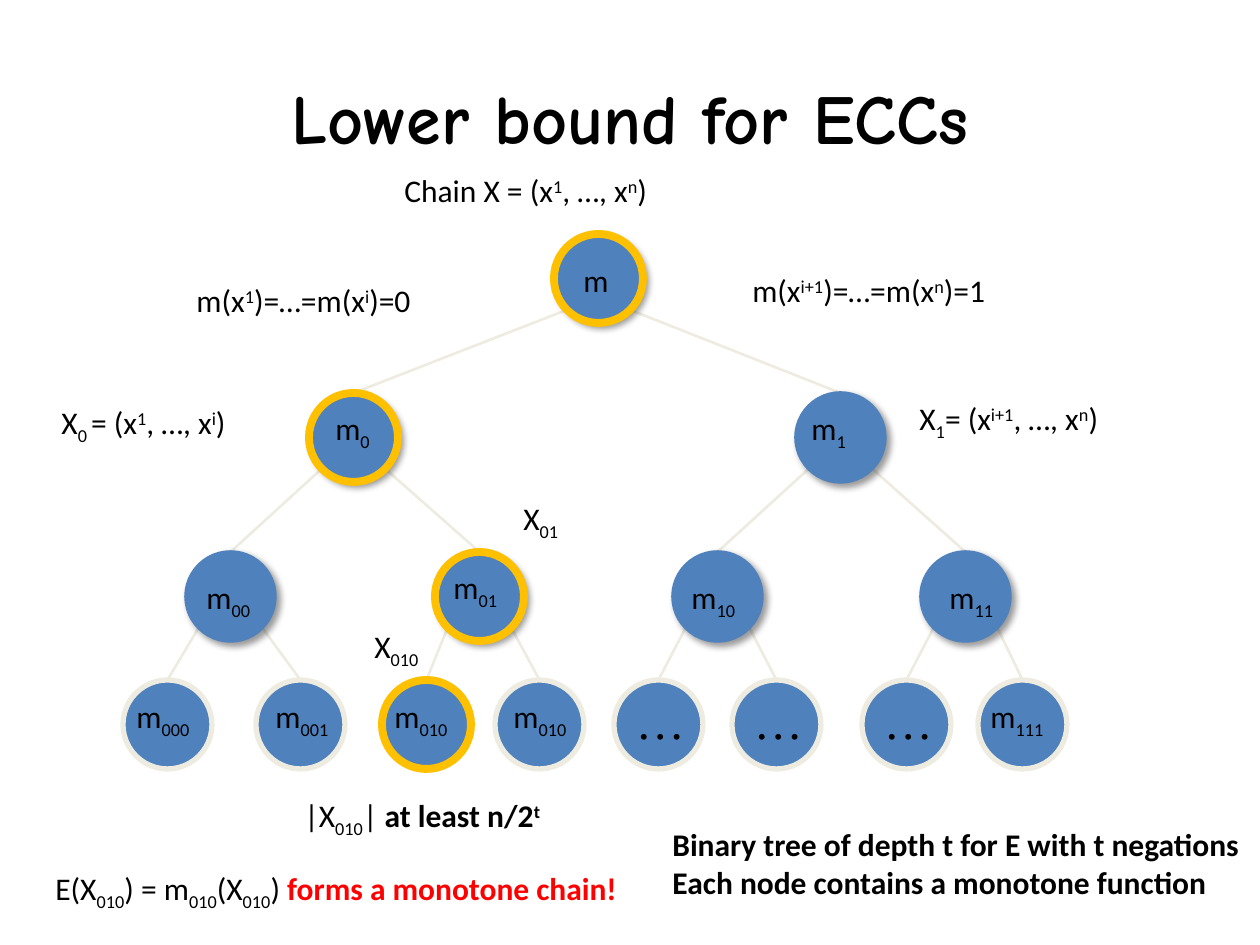
"""Build a slide with a binary tree of monotone functions."""
from lxml.etree import SubElement
from pptx import Presentation
from pptx.dml.color import RGBColor as RGB
from pptx.enum.shapes import MSO_CONNECTOR as CONN, MSO_SHAPE as SHAPE
from pptx.enum.text import MSO_ANCHOR as ANCHOR, MSO_AUTO_SIZE as AUTO, PP_ALIGN as ALIGN
from pptx.oxml.ns import qn
from pptx.util import Emu, Inches, Pt

BLACK, RED = RGB(0, 0, 0), RGB(0xFF, 0, 0)
BLUE, GOLD, CREAM = RGB(0x4F, 0x81, 0xBD), RGB(0xFF, 0xC0, 0), RGB(0xEE, 0xEC, 0xE1)
SCALE = 914400 / 126
SIZE, ARM_X, ARM_Y = 89, 32, 76

TITLE = "Lower bound for ECCs"
LEVELS = [
    (234, [554]),
    (393, [309, 796]),
    (552, [186, 435, 673, 921]),
    (680, [123, 256, 382, 495, 614, 732, 862, 978]),
]
ELLIPSIS_NODES = (11, 12, 13)
CHOSEN_NODES = (0, 1, 4, 9)

# Markup: "~" splits runs; a leading _ is subscript, ^ superscript, * bold, ! bold red.
LABELS = [
    ("m", 571, 255, 52),
    ("m~_0", 323, 403, 62),
    ("m~_1", 799, 403, 72),
    ("m~_00", 194, 572, 72),
    ("m~_01", 441, 562, 72),
    ("m~_10", 679, 572, 72),
    ("m~_11", 937, 572, 72),
    ("m~_000", 124, 691, 83),
    ("m~_001", 263, 691, 83),
    ("m~_010", 382, 691, 83),
    ("m~_010", 501, 691, 83),
    ("m~_111", 978, 691, 83),
    ("Chain X = (x~^1~, …, x~^n~)", 392, 165, 338),
    ("X~_0 ~= (x~^1~, …, x~^i~)", 49, 397, 268),
    ("m(x~^1~)=…=m(x~^i~)=0", 184, 275, 246),
    ("m(x~^i+1~)=…=m(x~^n~)=1", 740, 265, 266),
    ("X~_1~= (x~^i+1~, …, x~^n~)", 907, 393, 229),
    ("X~_01", 511, 493, 63),
    ("X~_010", 362, 621, 74),
    ("*Binary tree of depth t for E with t negations\n*Each node contains a monotone function", 660, 819, 600),
    ("|X~_010~| ~*at least n/2~^*t", 292, 790, 285),
    ("E(X~_010~) = m~_010~(X~_010~) ~!forms a monotone chain!", 43, 863, 616),
]
STYLES = {
    "_": {"base": -25000},
    "^": {"base": 30000},
    "*": {"bold": True},
    "!": {"bold": True, "color": RED},
}


def px(n):
    return Emu(round(n * SCALE))


def write(tf, text, size=18, font="Calibri", color=BLACK, bold=False, italic=False, align=ALIGN.LEFT):
    for i, line in enumerate(text.split("\n")):
        p = tf.add_paragraph() if i else tf.paragraphs[0]
        p.alignment = align
        for part in line.split("~"):
            style = {}
            while part[0] in STYLES:
                style.update(STYLES[part[0]])
                part = part[1:]
            r = p.add_run()
            r.text = part
            r.font.size, r.font.name = Pt(size), font
            r.font.bold, r.font.italic = style.get("bold", bold), italic
            r.font.color.rgb = style.get("color", color)
            if "base" in style:
                r.font._element.set("baseline", str(style["base"]))


def add_circle(shapes, x, y, line, width, fill=None, shadow=False):
    sp = shapes.add_shape(SHAPE.OVAL, px(x), px(y), px(SIZE), px(SIZE))
    sp.shadow.inherit = False
    if fill is None:
        sp.fill.background()
    else:
        sp.fill.solid()
        sp.fill.fore_color.rgb = fill
    sp.line.color.rgb, sp.line.width = line, Pt(width)
    if shadow:
        effects = sp._element.spPr.find(qn("a:effectLst"))
        outer = SubElement(effects, qn("a:outerShdw"), blurRad=str(Pt(4)), dist=str(Pt(3)),
                           dir="2700000", rotWithShape="0")
        SubElement(SubElement(outer, qn("a:srgbClr"), val=str(BLACK)), qn("a:alpha"), val="40000")
    return sp


def add_edge(shapes, parent, child, side):
    (x1, y1), (x2, y2) = parent, child
    start = x1 + SIZE / 2 + side * ARM_X, y1 + ARM_Y
    end = x2 + SIZE / 2, y2
    c = shapes.add_connector(CONN.STRAIGHT, *map(px, start + end))
    c.line.color.rgb, c.line.width = CREAM, Pt(1.5)
    SubElement(c._element.spPr, qn("a:effectLst"))


def add_tree(s):
    nodes = [(x, y) for y, xs in LEVELS for x in xs]
    first_leaf = len(nodes) // 2
    tree = s.shapes.add_group_shape().shapes
    for i, node in enumerate(nodes[1:], 1):
        add_edge(tree, nodes[(i - 1) // 2], node, -1 if i % 2 else 1)
    for i, (x, y) in enumerate(nodes):
        leaf = i >= first_leaf
        sp = add_circle(tree, x, y, CREAM if leaf else BLUE, 3 if leaf else 2, BLUE, not leaf)
        if i in ELLIPSIS_NODES:
            sp.text_frame.vertical_anchor = ANCHOR.BOTTOM
            write(sp.text_frame, "…", size=28, font="Times New Roman", italic=True, align=ALIGN.CENTER)
    for i in CHOSEN_NODES:
        add_circle(s.shapes, *nodes[i], GOLD, 4.5)


def main():
    prs = Presentation()
    prs.slide_width, prs.slide_height = Inches(10), Inches(7.5)
    s = prs.slides.add_slide(prs.slide_layouts[5])
    title = s.shapes.title
    title.left, title.top, title.width, title.height = map(px, (63, 68, 1134, 97))
    title.text_frame.vertical_anchor = ANCHOR.MIDDLE
    write(title.text_frame, TITLE, size=40, font="Comic Neue", bold=True, align=ALIGN.CENTER)
    add_tree(s)
    for text, x, y, w in LABELS:
        tf = s.shapes.add_textbox(px(x), px(y), px(w), px(50 + 39 * text.count("\n"))).text_frame
        tf.word_wrap, tf.auto_size = True, AUTO.SHAPE_TO_FIT_TEXT
        write(tf, text)
    prs.save("out.pptx")


if __name__ == "__main__":
    main()
